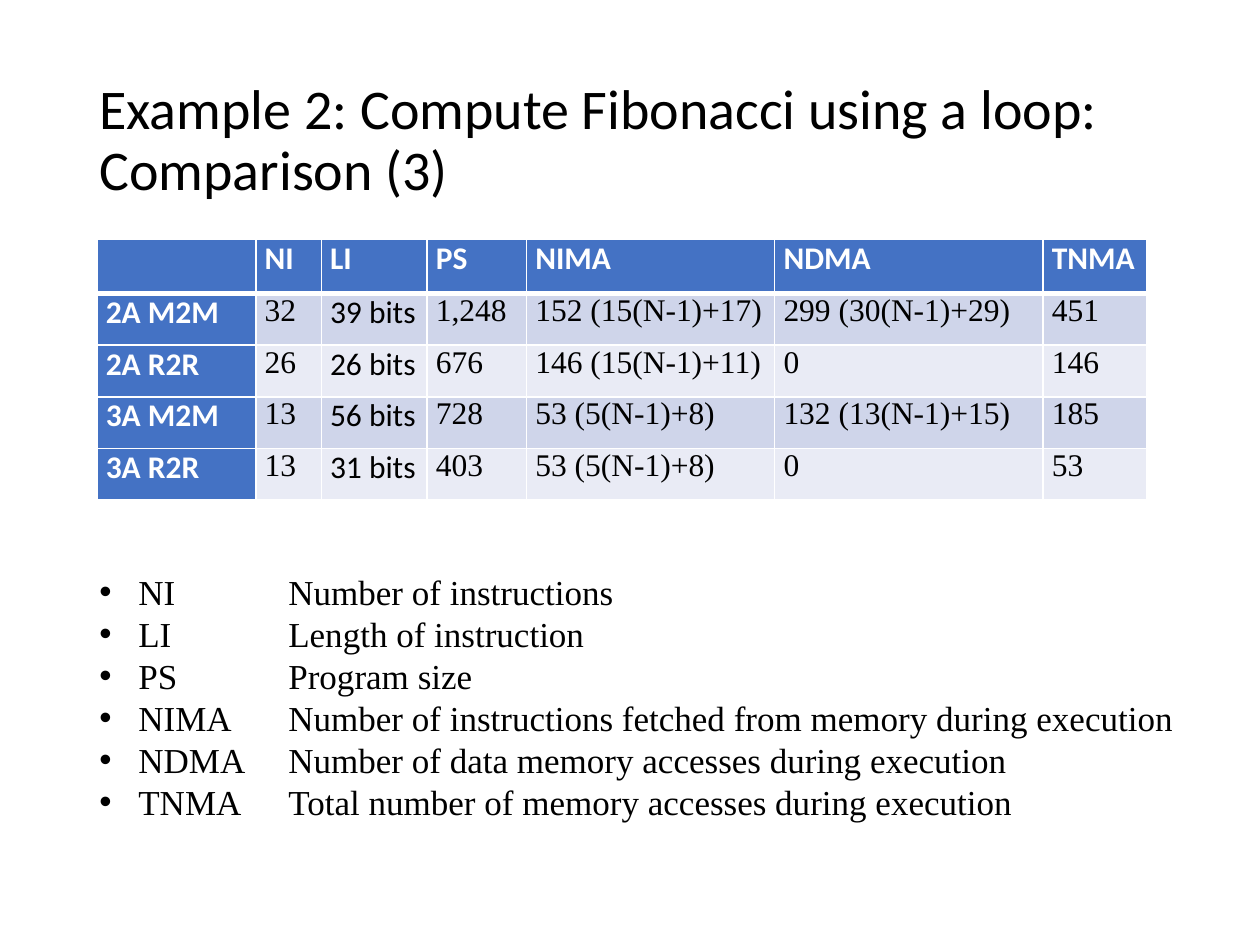
from dataclasses import dataclass

from lxml.etree import SubElement
from pptx import Presentation
from pptx.dml.color import RGBColor
from pptx.enum.text import MSO_ANCHOR, MSO_AUTO_SIZE, PP_ALIGN
from pptx.oxml.ns import qn
from pptx.slide import Slide
from pptx.util import Inches, Pt

COLOURS = {"black": "000000", "white": "FFFFFF", "head": "4472C4",
           "odd": "CFD5EA", "even": "E9EBF5"}
SANS, SERIF = "Calibri", "Times New Roman"
GRID_COLUMNS, GRID_ROWS = 100, 75

COMPARISON = [
    ["", "NI", "LI", "PS", "NIMA", "NDMA", "TNMA"],
    ["2A M2M", "32", "39 bits", "1,248", "152 (15(N-1)+17)", "299 (30(N-1)+29)", "451"],
    ["2A R2R", "26", "26 bits", "676", "146 (15(N-1)+11)", "0", "146"],
    ["3A M2M", "13", "56 bits", "728", "53 (5(N-1)+8)", "132 (13(N-1)+15)", "185"],
    ["3A R2R", "13", "31 bits", "403", "53 (5(N-1)+8)", "0", "53"],
]
COLUMN_WIDTHS = [12.6, 5.2, 8.4, 7.9, 19.7, 21.3, 8.2]
ROW_HEIGHTS = [4.3] + [4.1] * 4
LENGTH_COLUMN = COMPARISON[0].index("LI")

GLOSSARY = {
    "NI": "Number of instructions",
    "LI": "Length of instruction",
    "PS": "Program size",
    "NIMA": "Number of instructions fetched from memory during execution",
    "NDMA": "Number of data memory accesses during execution",
    "TNMA": "Total number of memory accesses during execution",
}


@dataclass
class SlideBuilder:
    """Draws styled elements on one slide, placed by grid columns and rows."""
    slide: Slide
    column: float
    row: float

    def place(self, left, top, width, height):
        return (round(left * self.column), round(top * self.row),
                round(width * self.column), round(height * self.row))

    def add_span(self, para, text, size, font, colour="black", bold=False):
        span = para.add_run()
        span.text = text
        span.font.size = Pt(size)
        span.font.name = font
        span.font.bold = bold
        span.font.color.rgb = RGBColor.from_string(COLOURS[colour])

    def text_frame(self, *area):
        frame = self.slide.shapes.add_textbox(*self.place(*area)).text_frame
        frame.word_wrap = True
        return frame

    def title(self, text, *area):
        frame = self.text_frame(*area)
        frame.vertical_anchor = MSO_ANCHOR.MIDDLE
        frame.paragraphs[0].line_spacing = 0.9
        self.add_span(frame.paragraphs[0], text, 32, SANS)

    def border(self, cell, side, width):
        line = SubElement(cell._tc.get_or_add_tcPr(), qn(f"a:ln{side}"), w=str(Pt(width)))
        fill = SubElement(line, qn("a:solidFill"))
        SubElement(fill, qn("a:srgbClr"), val=COLOURS["white"])

    def cell(self, cell, text, row, column):
        heading = row == 0 or column == 0
        for side in "LRTB":
            under_header = (row, side) in ((0, "B"), (1, "T"))
            self.border(cell, side, 3 if under_header else 1)
        fill = "head" if heading else "odd" if row % 2 else "even"
        cell.fill.solid()
        cell.fill.fore_color.rgb = RGBColor.from_string(COLOURS[fill])
        cell.margin_left = cell.margin_right = Inches(0.07)
        cell.margin_top = cell.margin_bottom = 0
        if text:
            para = cell.text_frame.paragraphs[0]
            para.alignment = PP_ALIGN.JUSTIFY
            para.space_after = Pt(2)
            font = SANS if heading or column == LENGTH_COLUMN else SERIF
            self.add_span(para, text, 18, font, "white" if heading else "black", heading)

    def table(self, rows, widths, heights, left, top):
        area = self.place(left, top, sum(widths), sum(heights))
        table = self.slide.shapes.add_table(len(rows), len(widths), *area).table
        for column, width in zip(table.columns, widths):
            column.width = round(width * self.column)
        for row, height in zip(table.rows, heights):
            row.height = round(height * self.row)
        for r, row in enumerate(rows):
            for c, text in enumerate(row):
                self.cell(table.cell(r, c), text, r, c)

    def glossary(self, entries, *area):
        frame = self.text_frame(*area)
        frame.auto_size = MSO_AUTO_SIZE.SHAPE_TO_FIT_TEXT
        for index, (term, meaning) in enumerate(entries.items()):
            para = frame.add_paragraph() if index else frame.paragraphs[0]
            properties = para._p.get_or_add_pPr()
            properties.set("marL", str(Inches(0.31)))
            properties.set("indent", str(-Inches(0.31)))
            SubElement(properties, qn("a:buFont"), typeface="Arial")
            SubElement(properties, qn("a:buChar"), char="•")
            stops = SubElement(properties, qn("a:tabLst"))
            SubElement(stops, qn("a:tab"), pos=str(Inches(1.5)), algn="l")
            self.add_span(para, f"{term}\t{meaning}", 20, SERIF)


def main():
    deck = Presentation()
    deck.slide_width, deck.slide_height = Inches(10), Inches(7.5)
    page = SlideBuilder(deck.slides.add_slide(deck.slide_layouts[6]),
                        deck.slide_width / GRID_COLUMNS, deck.slide_height / GRID_ROWS)
    page.title("Example 2: Compute Fibonacci using a loop: Comparison (3)", 6.9, 4, 86.2, 14.5)
    page.table(COMPARISON, COLUMN_WIDTHS, ROW_HEIGHTS, 7.7, 19)
    page.glossary(GLOSSARY, 6.9, 44.8, 88.7, 21.2)
    deck.save("out.pptx")


if __name__ == "__main__":
    main()
